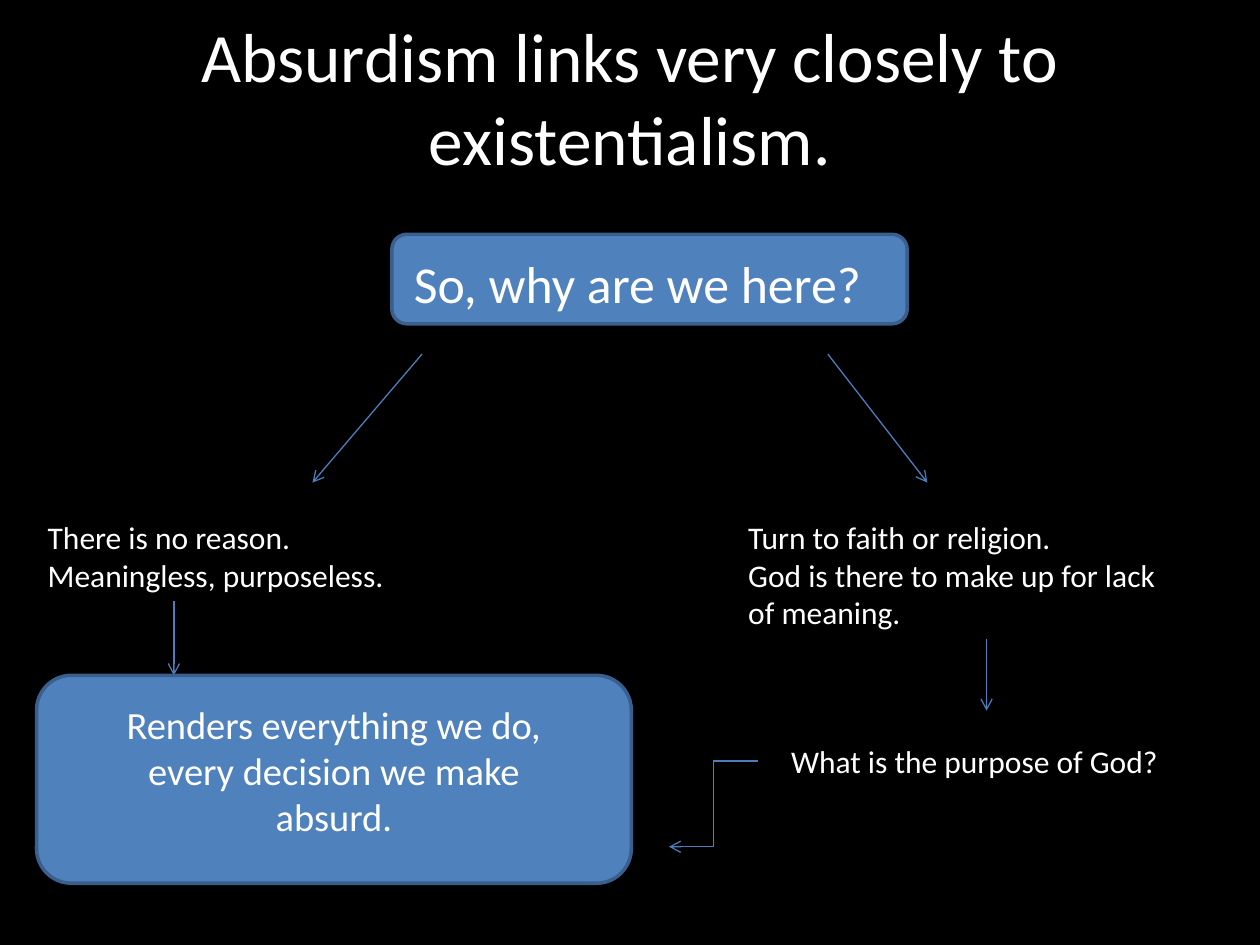
from dataclasses import dataclass

from lxml import etree
from pptx import Presentation
from pptx.dml.color import RGBColor
from pptx.enum.shapes import MSO_CONNECTOR, MSO_SHAPE
from pptx.enum.text import MSO_ANCHOR, PP_ALIGN
from pptx.oxml.ns import qn
from pptx.util import Inches, Pt

ROUNDED = MSO_SHAPE.ROUNDED_RECTANGLE
STRAIGHT, ELBOW = MSO_CONNECTOR.STRAIGHT, MSO_CONNECTOR.ELBOW
LEFT, CENTER = PP_ALIGN.LEFT, PP_ALIGN.CENTER
TOP, MIDDLE = MSO_ANCHOR.TOP, MSO_ANCHOR.MIDDLE
TITLE_ONLY = 5


@dataclass(frozen=True)
class Theme:
    """Colours, font and type sizes of the slide."""
    background: RGBColor = RGBColor(0, 0, 0)
    text: RGBColor = RGBColor(255, 255, 255)
    panel: RGBColor = RGBColor.from_string("4F81BD")
    border: RGBColor = RGBColor.from_string("3A5F8C")
    arrow: RGBColor = RGBColor.from_string("4B7EBC")
    font: str = "Calibri"
    title: float = 39.6
    question: float = 29.6
    conclusion: float = 22
    body: float = 18


THEME = Theme()


def write(frame, lines, size, align=LEFT, anchor=TOP):
    """Fill a text frame with one paragraph for each line."""
    frame.word_wrap = True
    frame.vertical_anchor = anchor
    frame.text = "\n".join(lines)
    for paragraph in frame.paragraphs:
        paragraph.alignment = align
        paragraph.font.name = THEME.font
        paragraph.font.size = Pt(size)
        paragraph.font.color.rgb = THEME.text


def place_title(slide, left, top, width, height):
    """Place and format the title placeholder."""
    title = slide.shapes.title
    title.left, title.top = Inches(left), Inches(top)
    title.width, title.height = Inches(width), Inches(height)
    write(title.text_frame, ["Absurdism links very closely to existentialism."],
          THEME.title, CENTER, MIDDLE)


def add_panel(slide, box, text, size, align, side_margin, top_margin):
    """Add a rounded blue panel holding one statement."""
    panel = slide.shapes.add_shape(ROUNDED, *map(Inches, box))
    panel.shadow.inherit = False
    panel.fill.solid()
    panel.fill.fore_color.rgb = THEME.panel
    panel.line.color.rgb = THEME.border
    panel.line.width = Pt(2)
    frame = panel.text_frame
    frame.margin_left = frame.margin_right = Inches(side_margin)
    frame.margin_top = Inches(top_margin)
    write(frame, [text], size, align)


def add_note(slide, left, top, width, height, *lines):
    """Add plain text on the background."""
    note = slide.shapes.add_textbox(*map(Inches, (left, top, width, height)))
    write(note.text_frame, lines, THEME.body)


def add_arrow(slide, start, end, kind=STRAIGHT):
    """Add a thin arrow pointing at its end."""
    arrow = slide.shapes.add_connector(kind, *map(Inches, (*start, *end)))
    arrow.line.color.rgb = THEME.arrow
    arrow.line.width = Pt(0.75)
    etree.SubElement(arrow.line._get_or_add_ln(), qn("a:tailEnd"), type="arrow")
    etree.SubElement(arrow._element.spPr, qn("a:effectLst"))


def add_question(slide, left, top, width, height):
    """Add the opening question and its two diverging arrows."""
    add_panel(slide, (left, top, width, height), "So, why are we here?",
              THEME.question, LEFT, 0.14, 0.1)
    for start, end in ((0.24, -0.63), (3.46, 4.25)):
        add_arrow(slide, (left + start, top + 0.95), (left + end, top + 1.97))


def add_no_reason(slide, left, top, width):
    """Add the branch that ends in absurdity."""
    add_note(slide, left, top, 3.54, 0.71,
             "There is no reason.", "Meaningless, purposeless.")
    add_arrow(slide, (left + 1.1, top + 0.71), (left + 1.1, top + 1.3))
    add_panel(slide, (left + 0.01, top + 1.3, width, 1.65),
              "Renders everything we do, every decision we make absurd.",
              THEME.conclusion, CENTER, 0.34, 0.12)


def add_faith(slide, left, top, width):
    """Add the branch of faith, which leads back to absurdity."""
    add_note(slide, left, top, width, 1.01, "Turn to faith or religion.",
             "God is there to make up for lack of meaning.")
    add_arrow(slide, (left + 1.99, top + 1.01), (left + 1.99, top + 1.58))
    add_note(slide, left + 0.34, top + 1.78, 3.62, 0.4,
             "What is the purpose of God?")
    add_arrow(slide, (left + 0.18, top + 1.98), (left - 0.53, top + 2.66), ELBOW)


def main():
    """Build the slide and save it."""
    deck = Presentation()
    deck.slide_width, deck.slide_height = Inches(10), Inches(7.5)
    slide = deck.slides.add_slide(deck.slide_layouts[TITLE_ONLY])
    slide.background.fill.solid()
    slide.background.fill.fore_color.rgb = THEME.background
    branch_top = 4.06
    place_title(slide, 0.5, 0.3, 9, 0.93)
    add_question(slide, 3.11, 1.86, 4.09, 0.71)
    add_no_reason(slide, 0.28, branch_top, 4.72)
    add_faith(slide, 5.84, branch_top, 3.54)
    deck.save("out.pptx")


if __name__ == "__main__":
    main()
